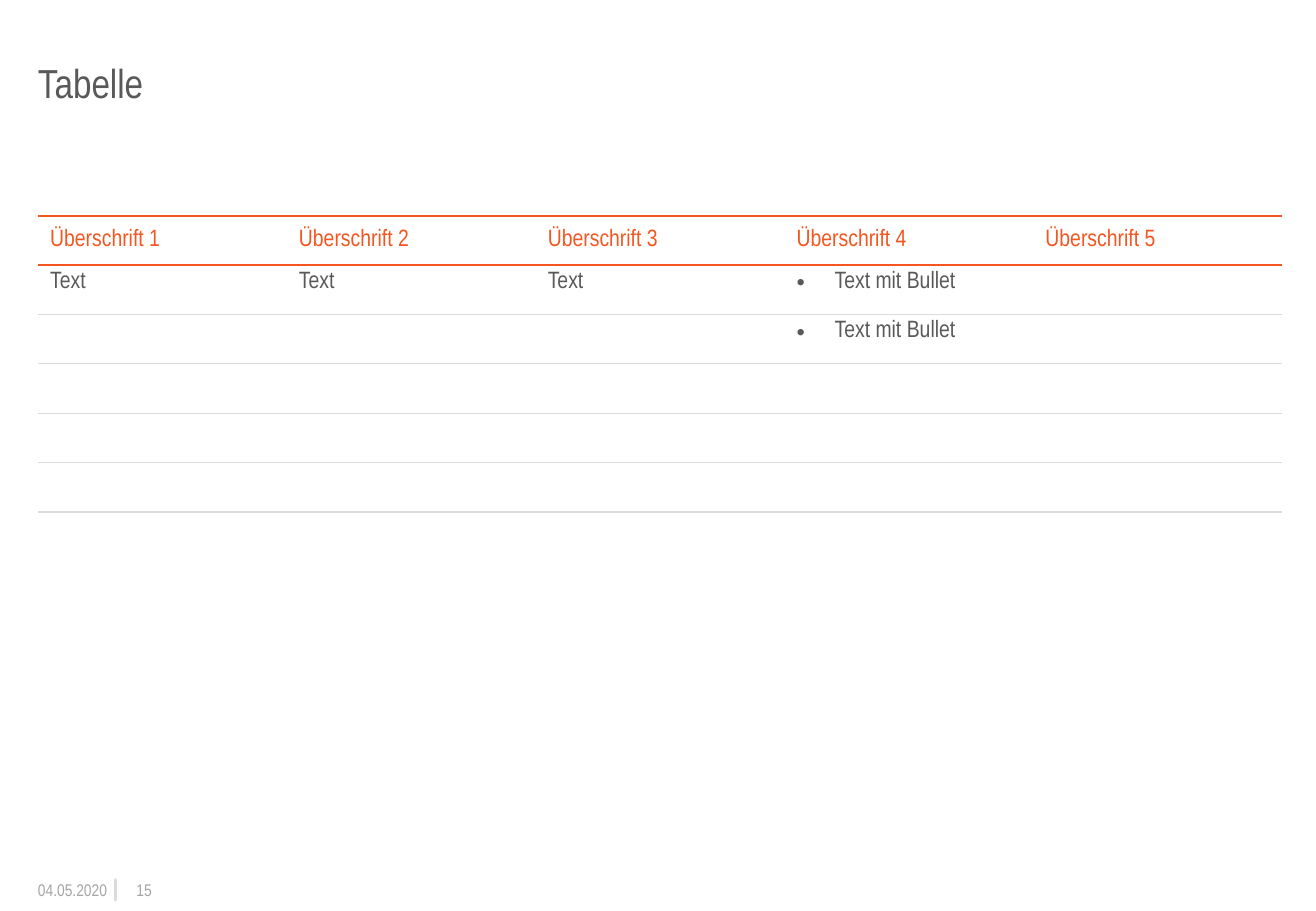
from pptx import Presentation
from pptx.dml.color import RGBColor
from pptx.enum import shapes, text
from pptx.oxml import ns
from pptx.util import Pt
from lxml import etree

ORANGE = RGBColor(0xF3, 0x56, 0x20)
DARK = RGBColor(0x59, 0x59, 0x59)
GREY = RGBColor(0xA5, 0xA5, 0xA5)
RULE = RGBColor(0xDC, 0xDC, 0xDC)
BULLET = "• "
LEFT, WIDTH = 22.5, 737.5

ROWS = [
    [f"Überschrift {n}" for n in range(1, 6)],
    ["Text", "Text", "Text", BULLET + "Text mit Bullet", ""],
    ["", "", "", BULLET + "Text mit Bullet", ""],
    [""] * 5,
    [""] * 5,
    [""] * 5,
]


def sub(parent, tag, **attrs):
    return etree.SubElement(parent, ns.qn(tag), attrs)


class Deck:
    font = "Arial Narrow"

    def __init__(self, width, height):
        self.prs = Presentation()
        self.prs.slide_width, self.prs.slide_height = Pt(width), Pt(height)
        self.s = self.prs.slides.add_slide(self.prs.slide_layouts[5])

    def set_text(self, tf, content, size, color, align=text.PP_ALIGN.LEFT):
        tf.text = content
        p = tf.paragraphs[0]
        p.alignment = align
        for r in p.runs:
            r.font.name, r.font.size = self.font, Pt(size)
            r.font.color.rgb = color
        return p

    def frame(self, tf, anchor, wrap, bottom=0):
        tf.margin_left = tf.margin_right = tf.margin_top = 0
        tf.margin_bottom = Pt(bottom)
        tf.vertical_anchor, tf.word_wrap = anchor, wrap
        tf.auto_size = text.MSO_AUTO_SIZE.NONE

    def title(self, content, x, y, w, h):
        sp = self.s.shapes.title
        sp.left, sp.top, sp.width, sp.height = Pt(x), Pt(y), Pt(w), Pt(h)
        self.frame(sp.text_frame, text.MSO_ANCHOR.TOP, True, 8.5)
        self.set_text(sp.text_frame, content, 24, DARK).line_spacing = 0.9

    def label(self, content, x, y, w, h, align=text.PP_ALIGN.LEFT):
        sp = self.s.shapes.add_textbox(Pt(x), Pt(y), Pt(w), Pt(h))
        self.frame(sp.text_frame, text.MSO_ANCHOR.MIDDLE, False)
        self.set_text(sp.text_frame, content, 10, GREY, align)

    def divider(self, x, top, bottom):
        sp = self.s.shapes.add_connector(
            shapes.MSO_CONNECTOR.STRAIGHT, Pt(x), Pt(top), Pt(x), Pt(bottom))
        sp.line.color.rgb, sp.line.width = RULE, Pt(2)
        ln = sp._element.spPr.find(ns.qn("a:ln"))
        ln.set("cap", "rnd")
        sub(sp._element.spPr, "a:effectLst")

    def borders(self, cell, top, bottom):
        """Draw top and bottom as (colour, width) and hide the sides."""
        tcPr = cell._tc.get_or_add_tcPr()
        for side, edge in zip("LRTB", (None, None, top, bottom)):
            color, width = edge or (None, 0)
            ln = sub(tcPr, f"a:ln{side}", w=str(Pt(width)))
            if edge:
                sub(sub(ln, "a:solidFill"), "a:srgbClr", val=str(color))
            else:
                sub(ln, "a:noFill")

    def table(self, rows, x, y, w, row_height):
        count = len(rows)
        tbl = self.s.shapes.add_table(count, len(rows[0]), Pt(x), Pt(y),
                                      Pt(w), Pt(row_height * count)).table
        tbl.horz_banding = tbl.first_row = False
        edges = [(ORANGE, 1.5)] * 2 + [(RULE, 0.75)] * (count - 2) + [(RULE, 1.5)]
        for i, row in enumerate(rows):
            for j, content in enumerate(row):
                cell = tbl.cell(i, j)
                self.borders(cell, edges[i], edges[i + 1])
                cell.fill.background()
                if i == 0:
                    cell.vertical_anchor = text.MSO_ANCHOR.MIDDLE
                p = self.set_text(cell.text_frame, content.removeprefix(BULLET),
                                  14, DARK if i else ORANGE)
                if content.startswith(BULLET):
                    pPr = p._p.get_or_add_pPr()
                    pPr.set("marL", str(Pt(22.5)))
                    pPr.set("indent", str(-Pt(22.5)))
                    sub(pPr, "a:buFont", typeface="Arial")
                    sub(pPr, "a:buChar", char=BULLET.strip())


def main():
    deck = Deck(780, 540)
    deck.divider(68.4, 521.5, 533.5)
    deck.title("Tabelle", LEFT, 37.5, WIDTH, 52.5)
    deck.label("04.05.2020", LEFT, 521.5, 41, 12)
    deck.label("15", 73.5, 521.5, 16.5, 12, text.PP_ALIGN.RIGHT)
    deck.table(ROWS, LEFT, 128, WIDTH, 29.25)
    deck.prs.save("out.pptx")


if __name__ == "__main__":
    main()
